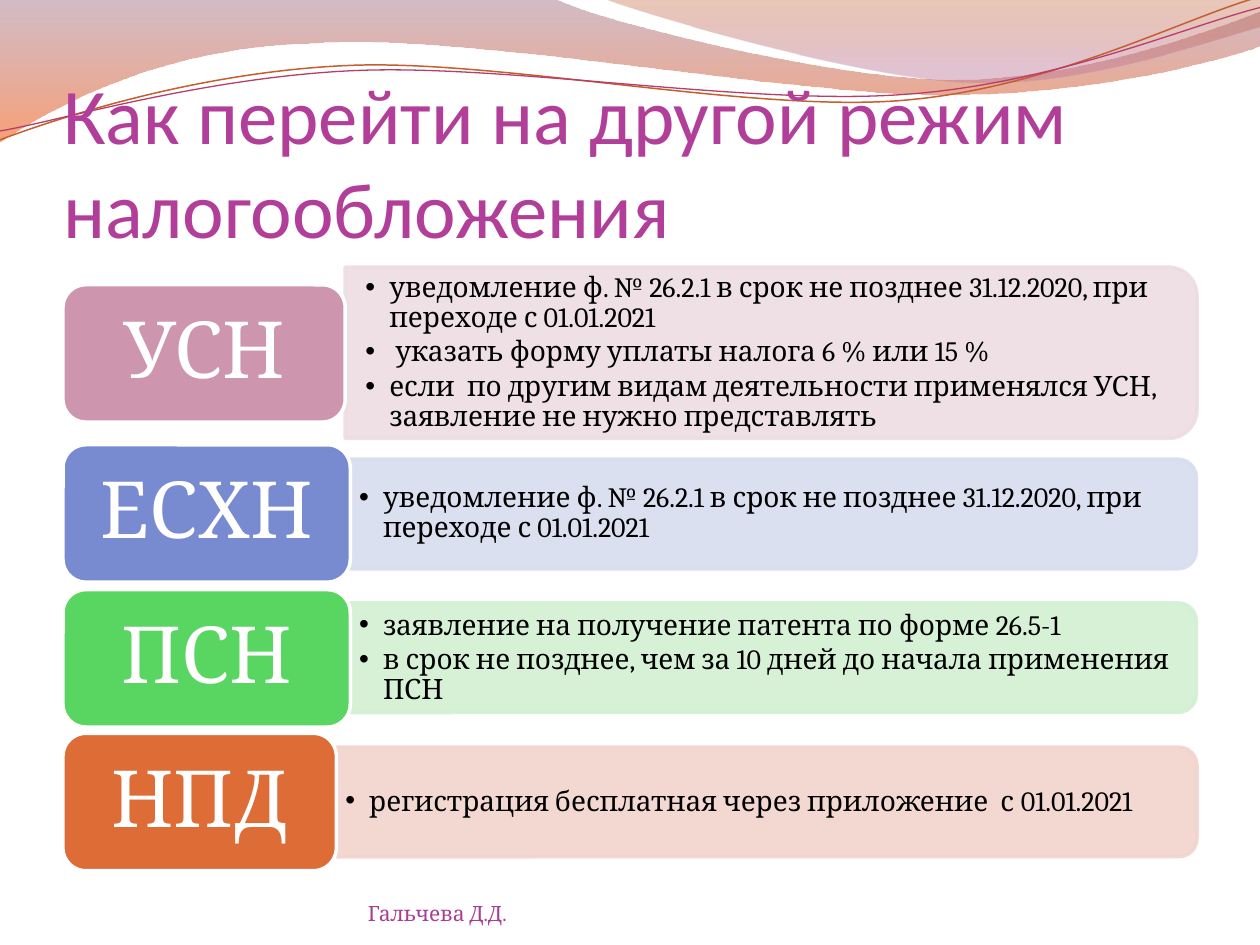
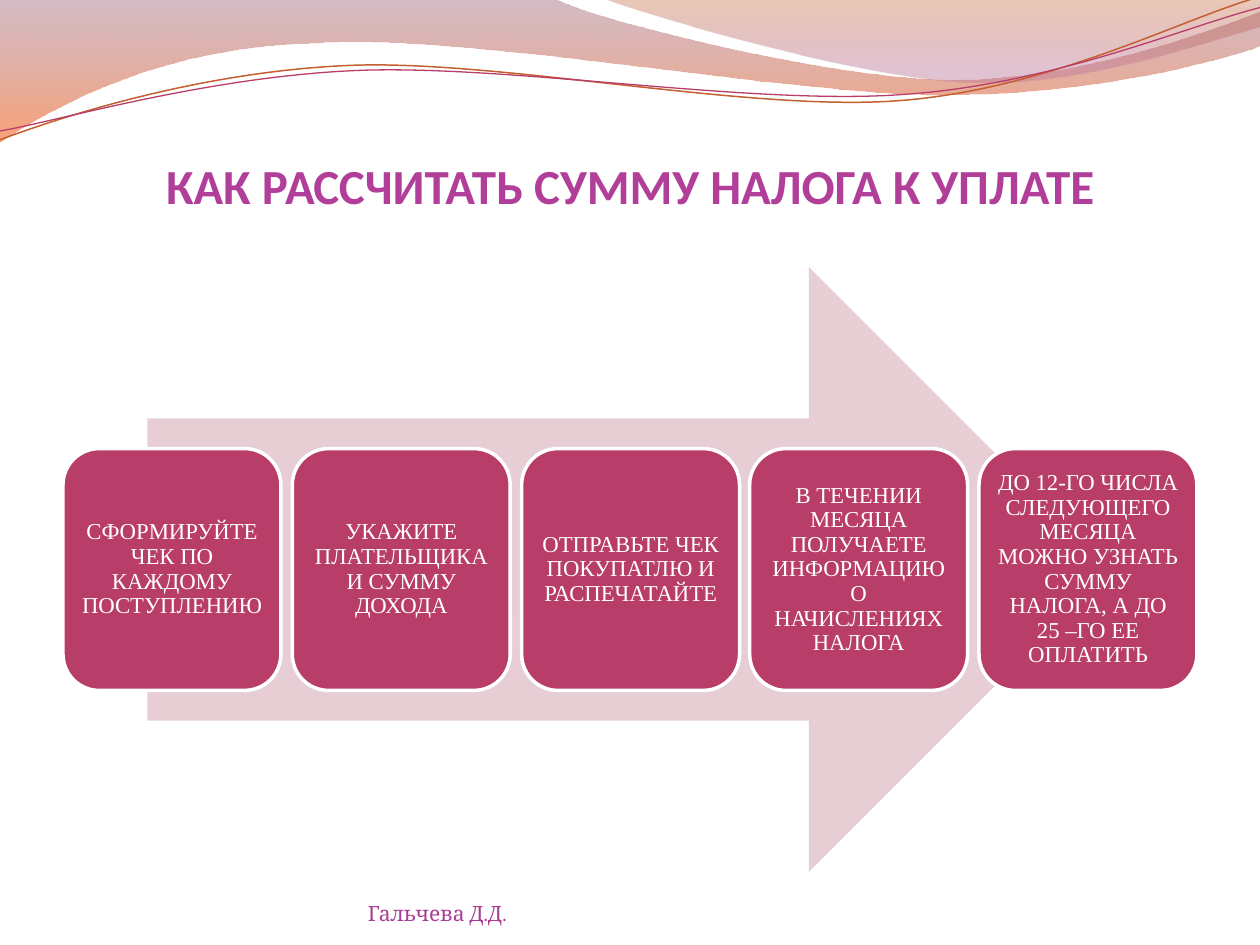
from dataclasses import dataclass
from typing import Any, Sequence

from lxml import etree
from pptx import Presentation, util as u
from pptx.dml import color as dml
from pptx.enum import shapes as sh, text as tx
from pptx.oxml import ns

SCALE = 9144
WIDTH, HEIGHT, MARGIN = 1000, 750, 50

WHITE, BLACK = "FFFFFF", "000000"
PURPLE, SIGNATURE, CRIMSON, ARROW_PINK = "B13F9A", "A93C93", "B83D68", "E6CED4"
HEADING, SERIF, TIMES = "Calibri", "Cambria", "Times New Roman"
AUTHOR = "Гальчева Д.Д."


@dataclass(frozen=True)
class Box:
    left: int
    top: int
    width: int
    height: int


@dataclass(frozen=True)
class Style:
    font: str
    size: int
    color: str
    bold: bool = False
    align: tx.PP_ALIGN = tx.PP_ALIGN.LEFT
    anchor: tx.MSO_ANCHOR = tx.MSO_ANCHOR.MIDDLE
    insets: tuple[int, int, int, int] = (0, 0, 0, 0)
    spacing: float = 1.0
    after: float = 0
    bullet_indent: int = 0


@dataclass(frozen=True)
class Stop:
    position: float
    color: str
    opacity: int


@dataclass(frozen=True)
class Wave:
    start: tuple[int, int]
    segments: tuple[tuple[int, ...], ...]
    stops: tuple[Stop, ...] = ()
    line: str = ""
    weight: float = 0


@dataclass(frozen=True)
class Regime:
    name: str
    label_width: int
    panel_height: int
    color: str
    tint: str
    insets: tuple[int, int, int, int]
    items: tuple[str, ...]

    @property
    def height(self) -> int:
        return max(LABEL_HEIGHT, self.panel_height)


WAVES = (
    Wave((0, 0), ((440, -1), (476, 17, 664, 63, 758, 63), (853, 63, 958, 26, 1000, 9),
                  (1001, 36), (983, 44, 870, 76, 746, 75), (622, 75, 382, 28, 257, 34),
                  (129, 36, 46, 83, -1, 113), (0, 0)),
         (Stop(0, "9D6A81", 45), Stop(1, "F35307", 55))),
    Wave((479, -1), ((509, 11, 682, 62, 769, 65), (856, 69, 961, 32, 1000, 21),
                     (1000, 0), (479, -1)),
         (Stop(0, "B74915", 30), Stop(0.8, "C0799A", 45))),
    Wave((0, 111), ((48, 93, 158, 57, 277, 52), (395, 47, 593, 89, 713, 80),
                    (833, 71, 938, 15, 998, -2)), line="C45F30", weight=0.85),
    Wave((0, 104), ((47, 96, 164, 61, 283, 56), (403, 51, 597, 84, 717, 75),
                    (836, 67, 941, 21, 1000, 6)), line=CRIMSON, weight=0.75),
)

WIDE_INSETS, NARROW_INSETS = (16, 8, 16, 8), (7, 3, 7, 3)
NOTICE = "уведомление ф. № 26.2.1 в срок не позднее 31.12.2020, при переходе с 01.01.2021"
REGIMES = (
    Regime("УСН", 224, 136, "CE95AF", "EDDDE3", WIDE_INSETS, (
        NOTICE,
        " указать форму уплаты налога 6 % или 15 %",
        "если  по другим видам деятельности применялся УСН, заявление не нужно представлять")),
    Regime("ЕСХН", 228, 87, "788AD0", "D8DDEF", NARROW_INSETS, (NOTICE,)),
    Regime("ПСН", 228, 87, "59D661", "D3F0D3", NARROW_INSETS, (
        "заявление на получение патента по форме 26.5-1",
        "в срок не позднее, чем за 10 дней до начала применения ПСН")),
    Regime("НПД", 217, 87, "DE6C36", "F2D4CE", NARROW_INSETS, (
        "регистрация бесплатная через приложение  с 01.01.2021",)),
)
REGIMES_TOP, REGIMES_BOTTOM, LABEL_HEIGHT = 212, 691, 109

STEPS = (
    "СФОРМИРУЙТЕ ЧЕК ПО КАЖДОМУ ПОСТУПЛЕНИЮ",
    "УКАЖИТЕ ПЛАТЕЛЬЩИКА И СУММУ ДОХОДА",
    "ОТПРАВЬТЕ ЧЕК ПОКУПАТЛЮ И РАСПЕЧАТАЙТЕ",
    "В ТЕЧЕНИИ МЕСЯЦА ПОЛУЧАЕТЕ ИНФОРМАЦИЮ О НАЧИСЛЕНИЯХ НАЛОГА",
    "ДО 12-ГО ЧИСЛА СЛЕДУЮЩЕГО МЕСЯЦА МОЖНО УЗНАТЬ СУММУ НАЛОГА, А ДО 25 –ГО ЕЕ ОПЛАТИТЬ",
)
STEP_WIDTH, STEP_HEIGHT, STEP_TOP = 173, 192, 356

TITLE_INSETS = (0, 5, 0, 0)
LONG_TITLE = Style(HEADING, 45, PURPLE, anchor=tx.MSO_ANCHOR.BOTTOM, insets=TITLE_INSETS)
CAPS_TITLE = Style(HEADING, 28, PURPLE, True, tx.PP_ALIGN.CENTER,
                   tx.MSO_ANCHOR.BOTTOM, TITLE_INSETS)
FOOTER = Style(SERIF, 12, SIGNATURE, anchor=tx.MSO_ANCHOR.BOTTOM)
LABEL = Style(SERIF, 45, WHITE, align=tx.PP_ALIGN.CENTER,
              insets=(19, 9, 19, 9), spacing=0.9, after=15.75)
STEP = Style(TIMES, 13, WHITE, align=tx.PP_ALIGN.CENTER,
             insets=(5, 5, 5, 5), spacing=0.9, after=4.55)


def px(length: float) -> int:
    return round(length * SCALE)


def rgb(value: str) -> dml.RGBColor:
    return dml.RGBColor.from_string(value)


def apply(target: Any, values: dict[str, Any]) -> None:
    for name, value in values.items():
        setattr(target, name, value)


def bounds(box: Box) -> tuple[int, ...]:
    return tuple(map(px, (box.left, box.top, box.width, box.height)))


def set_opacity(sp: Any, percents: Sequence[int]) -> None:
    colors = list(sp.element.spPr.iter(ns.qn("a:srgbClr")))
    for clr, percent in zip(colors, percents):
        etree.SubElement(clr, ns.qn("a:alpha")).set("val", str(percent * 1000))


def add_bullet(p: Any, indent: int) -> None:
    props = p._p.get_or_add_pPr()
    props.set("marL", str(px(indent)))
    props.set("indent", str(-px(indent)))
    etree.SubElement(props, ns.qn("a:buChar")).set("char", "•")


def write(sp: Any, lines: Sequence[str], style: Style) -> None:
    tf = sp.text_frame
    left, top, right, bottom = map(px, style.insets)
    apply(tf, dict(word_wrap=True, auto_size=tx.MSO_AUTO_SIZE.NONE,
                   vertical_anchor=style.anchor, margin_left=left, margin_top=top,
                   margin_right=right, margin_bottom=bottom))
    for i, line in enumerate(lines):
        p = tf.add_paragraph() if i else tf.paragraphs[0]
        apply(p, dict(alignment=style.align, line_spacing=style.spacing,
                      space_before=u.Pt(0), space_after=u.Pt(style.after)))
        if style.bullet_indent:
            p.level = 1
            add_bullet(p, style.bullet_indent)
        r = p.add_run()
        r.text = line
        apply(r.font, dict(name=style.font, size=u.Pt(style.size), bold=style.bold))
        r.font.color.rgb = rgb(style.color)


def fill_placeholder(s: Any, sp: Any, box: Box, lines: Sequence[str], style: Style) -> None:
    s.shapes.element.append(sp.element)
    apply(sp, dict(zip(("left", "top", "width", "height"), bounds(box))))
    write(sp, lines, style)


def add_preset(s: Any, kind: sh.MSO_SHAPE, box: Box, fill: str, line: str = "") -> Any:
    sp = s.shapes.add_shape(kind, *bounds(box))
    sp.shadow.inherit = False
    sp.fill.solid()
    sp.fill.fore_color.rgb = rgb(fill)
    if line:
        sp.line.color.rgb = rgb(line)
        sp.line.width = u.Pt(2)
    else:
        sp.line.fill.background()
    return sp


def add_card(s: Any, box: Box, fill: str, caption: str, style: Style) -> None:
    sp = add_preset(s, sh.MSO_SHAPE.ROUNDED_RECTANGLE, box, fill, WHITE)
    write(sp, (caption,), style)


def bend(sp: Any, segments: Sequence[tuple[int, ...]]) -> None:
    sides = list(sp.element.spPr.iter(ns.qn("a:lnTo")))
    for side, segment in zip(sides, segments):
        if len(segment) == 6:
            curve = etree.Element(ns.qn("a:cubicBezTo"))
            for x, y in zip(segment[::2], segment[1::2]):
                pt = etree.SubElement(curve, ns.qn("a:pt"))
                pt.set("x", str(px(x) - sp.left))
                pt.set("y", str(px(y) - sp.top))
            side.getparent().replace(side, curve)


def add_wave(s: Any, wave: Wave) -> Any:
    builder = s.shapes.build_freeform(*map(px, wave.start))
    ends = [(px(segment[-2]), px(segment[-1])) for segment in wave.segments]
    builder.add_line_segments(ends, close=bool(wave.stops))
    sp = builder.convert_to_shape()
    bend(sp, wave.segments)
    sp.shadow.inherit = False
    if wave.stops:
        sp.line.fill.background()
        sp.fill.gradient()
        sp.fill.gradient_angle = 270
        for target, stop in zip(sp.fill.gradient_stops, wave.stops):
            target.position = stop.position
            target.color.rgb = rgb(stop.color)
        set_opacity(sp, [stop.opacity for stop in wave.stops])
    else:
        sp.fill.background()
        sp.line.color.rgb = rgb(wave.line)
        sp.line.width = u.Pt(wave.weight)
    return sp


def decorate_master(prs: Any, s: Any) -> None:
    tree = prs.slide_master.shapes.element
    for i, wave in enumerate(WAVES):
        element = add_wave(s, wave).element
        element.nvSpPr.cNvPr.set("id", str(100 + i))
        tree.insert(2 + i, element)


def start_slide(prs: Any, layout: str, title: str, height: int, style: Style) -> Any:
    s = prs.slides.add_slide(prs.slide_layouts.get_by_name(layout))
    fill_placeholder(s, s.shapes.title, Box(MARGIN, 77, 900, height), (title,), style)
    return s


def add_footer(s: Any) -> None:
    write(s.shapes.add_textbox(*bounds(Box(292, 695, 367, 40))), (AUTHOR,), FOOTER)


def add_regime(s: Any, regime: Regime, body: Any, middle: float) -> None:
    left = MARGIN + regime.label_width
    width, height = WIDTH - MARGIN - left, regime.panel_height
    upright = Box(round(left + (width - height) / 2), round(middle - width / 2), height, width)
    panel = add_preset(s, sh.MSO_SHAPE.ROUND_2_SAME_RECTANGLE, upright, regime.tint, regime.tint)
    panel.rotation = 90
    set_opacity(panel, (90, 90))
    style = Style(SERIF, 16, BLACK, insets=regime.insets, spacing=0.9, after=2.4,
                  bullet_indent=19)
    area = Box(left, round(middle - height / 2), width - round(height / 20), height)
    fill_placeholder(s, body, area, regime.items, style)
    label = Box(MARGIN, round(middle - LABEL_HEIGHT / 2), regime.label_width, LABEL_HEIGHT)
    add_card(s, label, regime.color, regime.name, LABEL)


def build_regimes(prs: Any) -> Any:
    s = start_slide(prs, "Comparison", "Как перейти на другой режим налогообложения",
                    125, LONG_TITLE)
    bodies = [sp for sp in s.placeholders if sp.placeholder_format.idx]
    used = sum(regime.height for regime in REGIMES)
    gap = (REGIMES_BOTTOM - REGIMES_TOP - used) / (len(REGIMES) - 1)
    top = REGIMES_TOP
    for regime, body in zip(REGIMES, bodies):
        add_regime(s, regime, body, top + regime.height / 2)
        top += regime.height + gap
    add_footer(s)
    return s


def build_steps(prs: Any) -> None:
    s = start_slide(prs, "Title Only", "КАК РАССЧИТАТЬ СУММУ НАЛОГА К УПЛАТЕ", 93, CAPS_TITLE)
    add_preset(s, sh.MSO_SHAPE.RIGHT_ARROW, Box(117, 212, 765, 480), ARROW_PINK)
    pitch = (WIDTH - 2 * MARGIN - STEP_WIDTH) / (len(STEPS) - 1)
    for i, caption in enumerate(STEPS):
        box = Box(round(MARGIN + i * pitch), STEP_TOP, STEP_WIDTH, STEP_HEIGHT)
        add_card(s, box, CRIMSON, caption, STEP)
    add_footer(s)


def main() -> None:
    prs = Presentation()
    apply(prs, dict(slide_width=px(WIDTH), slide_height=px(HEIGHT)))
    decorate_master(prs, build_regimes(prs))
    build_steps(prs)
    prs.save("out.pptx")


if __name__ == "__main__":
    main()
